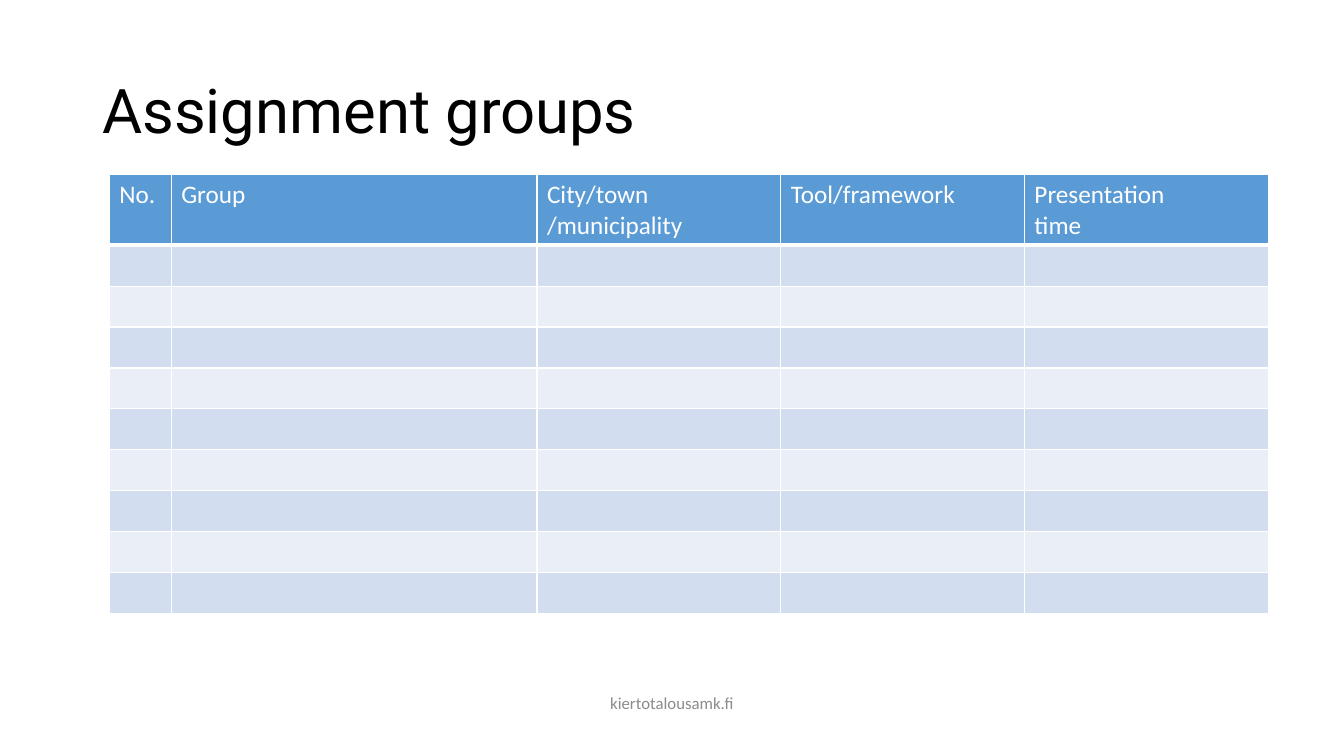
from lxml import etree
from pptx import Presentation
from pptx.dml.color import RGBColor
from pptx.enum import text
from pptx.oxml import ns
from pptx.util import Pt

COLORS = {
    "title": "000000",
    "footer": "8C8C8C",
    "header": "5B9BD5",
    "odd": "D2DEEF",
    "even": "EAEFF7",
    "white": "FFFFFF",
}
HEADINGS = ["No.", "Group", "City/town /municipality", "Tool/framework", "Presentation\ntime"]
COLUMN_WIDTHS = [44.3, 261.3, 174.1, 174.1, 174.1]
BODY_ROWS = 9
HEADER_HEIGHT = 50.4
ROW_HEIGHT = 29.2


def color(name):
    return RGBColor.from_string(COLORS[name])


def style(p, size, font, name):
    p.font.size = Pt(size)
    p.font.name = font
    p.font.color.rgb = color(name)


def add_text(s, box, words, size, font, name, align, spacing=1.0):
    tf = s.shapes.add_textbox(*map(Pt, box)).text_frame
    tf.word_wrap = True
    tf.vertical_anchor = text.MSO_ANCHOR.MIDDLE
    p = tf.paragraphs[0]
    p.text = words
    p.alignment = align
    p.line_spacing = spacing
    style(p, size, font, name)


def add_border(cell, side, width):
    tcPr = cell._tc.get_or_add_tcPr()
    ln = etree.SubElement(tcPr, ns.qn(f"a:ln{side}"), w=str(Pt(width)))
    fill = etree.SubElement(ln, ns.qn("a:solidFill"))
    etree.SubElement(fill, ns.qn("a:srgbClr"), val=COLORS["white"])


def format_cell(cell, row):
    for side in "LRTB":
        below_header = (row, side) in [(0, "B"), (1, "T")]
        add_border(cell, side, 3 if below_header else 1)
    cell.fill.solid()
    name = "header" if row == 0 else "odd" if row % 2 else "even"
    cell.fill.fore_color.rgb = color(name)
    style(cell.text_frame.paragraphs[0], 18, "Calibri", "white")


def add_group_table(s, left, top):
    height = HEADER_HEIGHT + BODY_ROWS * ROW_HEIGHT
    frame = s.shapes.add_table(BODY_ROWS + 1, len(HEADINGS), Pt(left), Pt(top),
                               Pt(sum(COLUMN_WIDTHS)), Pt(height))
    table = frame.table
    for column, width in zip(table.columns, COLUMN_WIDTHS):
        column.width = Pt(width)
    for i, row in enumerate(table.rows):
        row.height = Pt(ROW_HEIGHT if i else HEADER_HEIGHT)
        for cell, heading in zip(row.cells, HEADINGS):
            if i == 0:
                cell.text_frame.paragraphs[0].text = heading
            format_cell(cell, i)


def main():
    prs = Presentation()
    prs.slide_width, prs.slide_height = Pt(960), Pt(540)
    s = prs.slides.add_slide(prs.slide_layouts[6])
    add_text(s, (66, 28.8, 828, 104.4), "Assignment groups", 44, "Roboto", "title",
             text.PP_ALIGN.LEFT, 0.9)
    add_group_table(s, 78, 124.8)
    add_text(s, (318, 487.6, 324, 28.8), "kiertotalousamk.fi", 12, "Calibri", "footer",
             text.PP_ALIGN.CENTER)
    prs.save("out.pptx")


if __name__ == "__main__":
    main()
